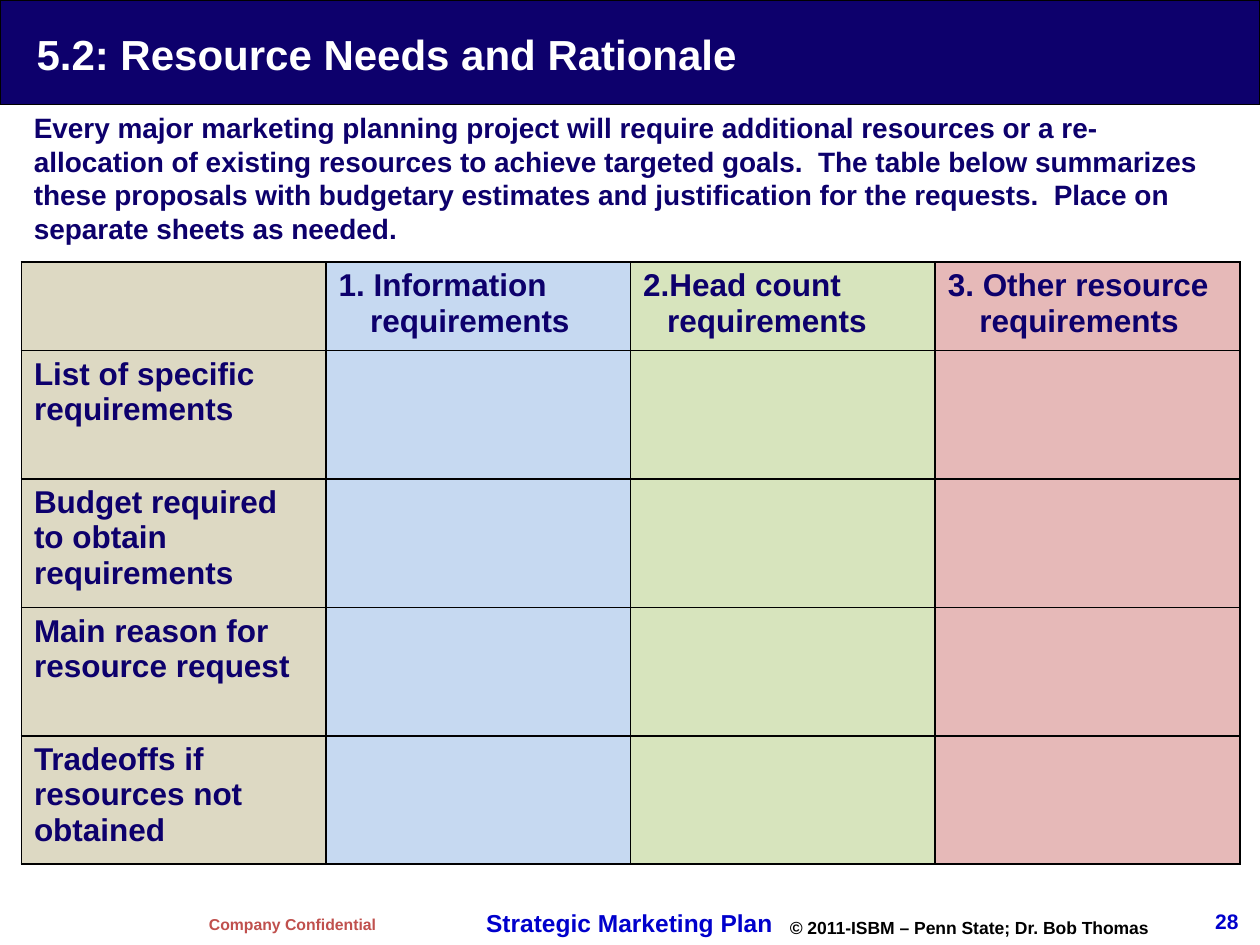
from lxml.etree import SubElement
from pptx import Presentation
from pptx.dml.color import RGBColor
from pptx.enum.shapes import MSO_SHAPE
from pptx.enum.text import MSO_ANCHOR, PP_ALIGN
from pptx.oxml.ns import qn
from pptx.util import Inches, Pt

NAVY = RGBColor(0x0D, 0x00, 0x6C)
BLUE = RGBColor(0x00, 0x00, 0xCC)
RED = RGBColor(0xC0, 0x50, 0x4D)
BLACK = RGBColor(0x00, 0x00, 0x00)
WHITE = RGBColor(0xFF, 0xFF, 0xFF)
TAN = RGBColor(0xDD, 0xD9, 0xC3)
PALE_BLUE = RGBColor(0xC6, 0xD9, 0xF1)
PALE_GREEN = RGBColor(0xD7, 0xE4, 0xBD)
PALE_RED = RGBColor(0xE6, 0xB9, 0xB8)


def write(frame, text, size, color):
    """Put bold Arial text in the frame and return its paragraph."""
    paragraph = frame.paragraphs[0]
    paragraph.text = text
    font = paragraph.font
    font.name, font.size, font.bold = "Arial", Pt(size), True
    font.color.rgb = color
    return paragraph


def add_text(box, text, size, color, wrap=True, margin=None):
    left, top, width, height = map(Inches, box)
    frame = slide.shapes.add_textbox(left, top, width, height).text_frame
    frame.word_wrap = wrap
    if margin is not None:
        frame.margin_left = frame.margin_right = Inches(margin)
        frame.margin_top = frame.margin_bottom = 0
    write(frame, text, size, color)
    return frame


prs = Presentation()
prs.slide_width, prs.slide_height = Inches(10), Inches(7.5)
slide = prs.slides.add_slide(prs.slide_layouts[6])

# Footer
add_text((1.56, 7.21, 1.53, 0.25), "Company Confidential", 9, RED, wrap=False)
add_text((3.76, 7.16, 2.49, 0.34), "Strategic Marketing Plan", 14, BLUE, wrap=False)
add_text((6.17, 7.23, 3.42, 0.27), "© 2011-ISBM – Penn State; Dr. Bob Thomas", 10, BLACK)
page_number = add_text((9, 7.08, 0.83, 0.33), "28", 12, BLUE, margin=0)
page_number.vertical_anchor = MSO_ANCHOR.BOTTOM
page_number.paragraphs[0].alignment = PP_ALIGN.RIGHT

# Title band
band = slide.shapes.add_shape(MSO_SHAPE.RECTANGLE, 0, 0, Inches(10), Inches(0.83))
band.shadow.inherit = False
band.fill.solid()
band.fill.fore_color.rgb = NAVY
band.line.color.rgb = BLACK
band.line.width = Pt(0.75)
title = add_text((0.17, 0.03, 9.67, 0.8), "5.2: Resource Needs and Rationale", 24, WHITE, margin=0)
title.vertical_anchor = MSO_ANCHOR.MIDDLE
title.paragraphs[0]._p.get_or_add_pPr().set("marL", str(Inches(0.12)))

add_text(
    (0.17, 0.83, 9.67, 1.33),
    "Every major marketing planning project will require additional resources or a "
    "re-allocation of existing resources to achieve targeted goals.  The table below "
    "summarizes these proposals with budgetary estimates and justification for the "
    "requests.  Place on separate sheets as needed.",
    16, NAVY,
)

# Resource table: heading, hanging indent and fill of each column
columns = [
    ("", 0, TAN),
    ("1. Information requirements", 0.25, PALE_BLUE),
    ("2.Head count requirements", 0.19, PALE_GREEN),
    ("3. Other resource requirements", 0.25, PALE_RED),
]
row_labels = [
    "List of specific requirements",
    "Budget required to obtain requirements",
    "Main reason for resource request",
    "Tradeoffs if resources not obtained",
]
table = slide.shapes.add_table(
    len(row_labels) + 1, len(columns),
    Inches(0.17), Inches(2.08), Inches(9.67), Inches(4.75),
).table
for row in table.rows:
    row.height = Inches(1.02)
table.rows[0].height = Inches(0.67)

for c, (heading, hanging, fill) in enumerate(columns):
    for r, label in enumerate([""] + row_labels):
        cell = table.cell(r, c)
        text = heading if r == 0 else label if c == 0 else ""
        paragraph = write(cell.text_frame, text, 18, NAVY)
        if r == 0 and hanging:
            properties = paragraph._p.get_or_add_pPr()
            properties.set("marL", str(Inches(hanging)))
            properties.set("indent", str(-Inches(hanging)))

        # Borders come before the fill in the cell properties
        cell_properties = cell._tc.get_or_add_tcPr()
        for side in ("a:lnL", "a:lnR", "a:lnT", "a:lnB"):
            border = SubElement(cell_properties, qn(side), w=str(Pt(1)))
            solid = SubElement(border, qn("a:solidFill"))
            SubElement(solid, qn("a:srgbClr"), val=str(BLACK))
        cell.fill.solid()
        cell.fill.fore_color.rgb = fill

prs.save("out.pptx")
